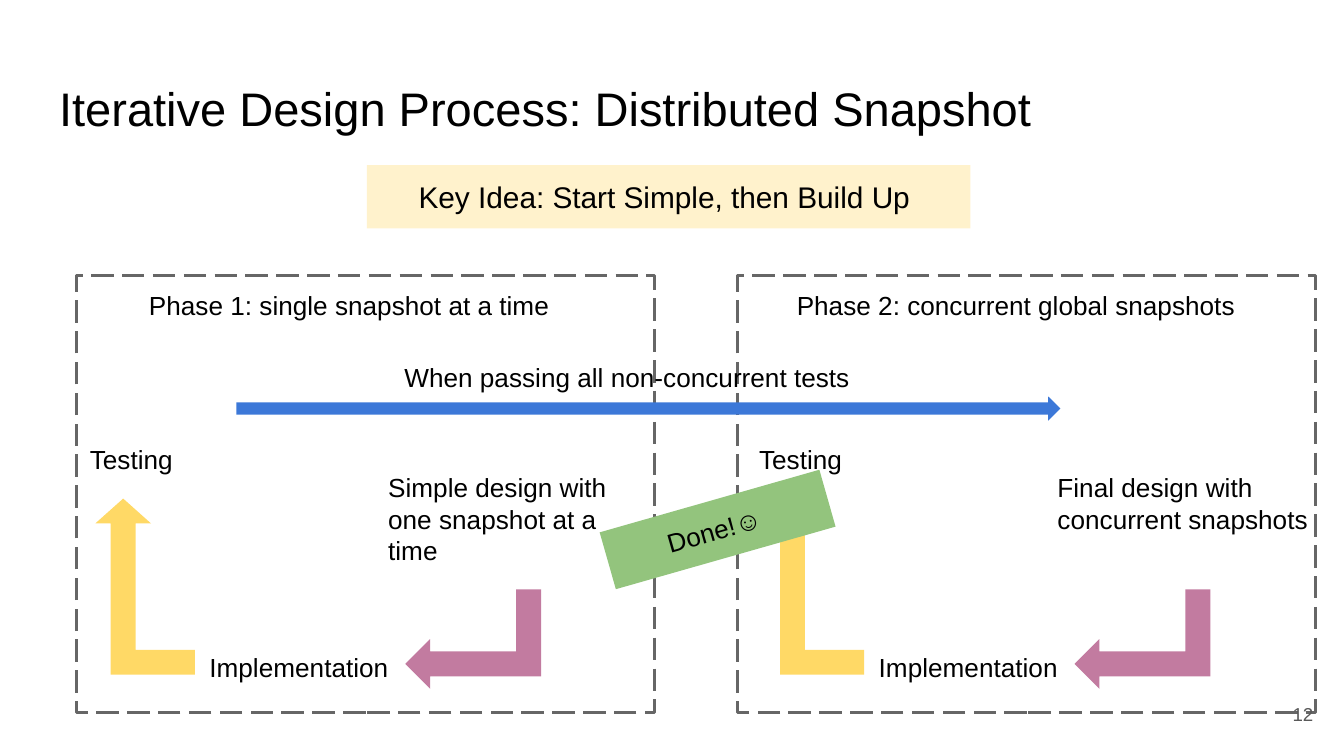
from dataclasses import dataclass

from pptx import Presentation
from pptx.dml.color import RGBColor
from pptx.enum.dml import MSO_LINE
from pptx.enum.shapes import MSO_SHAPE
from pptx.enum.text import MSO_ANCHOR, MSO_AUTO_SIZE, PP_ALIGN
from pptx.util import Inches, Pt

RECTANGLE = MSO_SHAPE.RECTANGLE
BENT_ARROW = MSO_SHAPE.BENT_UP_ARROW
RIGHT_ARROW = MSO_SHAPE.RIGHT_ARROW
LONG_DASH = MSO_LINE.LONG_DASH
TOP, MIDDLE = MSO_ANCHOR.TOP, MSO_ANCHOR.MIDDLE
NO_FIT = MSO_AUTO_SIZE.NONE
LEFT, CENTER, RIGHT = PP_ALIGN.LEFT, PP_ALIGN.CENTER, PP_ALIGN.RIGHT


@dataclass(frozen=True)
class Theme:
    font: str = "Arial"
    text: str = "000000"
    number: str = "595959"
    frame: str = "666666"
    key_idea: str = "FFF2CC"
    design: str = "C27BA0"
    testing: str = "FFD966"
    transition: str = "3C78D8"
    done: str = "93C47D"
    title_size: float = 25.2
    key_size: float = 16
    body_size: float = 14
    number_size: float = 10
    margin: float = 0.1


@dataclass(frozen=True)
class Box:
    left: float
    top: float
    width: float
    height: float

    def lengths(self):
        return [Inches(value) for value in (self.left, self.top, self.width, self.height)]

    def shifted(self, distance: float) -> "Box":
        return Box(self.left + distance, self.top, self.width, self.height)


@dataclass(frozen=True)
class Phase:
    heading: str
    heading_box: Box
    design: str
    design_box: Box
    offset: float


THEME = Theme()
FRAME = Box(0.57, 2.05, 4.3, 3.25)
FRAME_STEP = 4.92
PHASES = [
    Phase("Phase 1: single snapshot at a time", Box(1.01, 2.05, 3.23, 0.44),
          "Simple design with one snapshot at a time", Box(2.79, 3.41, 1.96, 0.91), 0),
    Phase("Phase 2: concurrent global snapshots", Box(5.83, 2.05, 3.52, 0.44),
          "Final design with concurrent snapshots", Box(7.77, 3.41, 2.16, 0.67), 4.98),
]


def write_text(shape, text: str, size: float = THEME.body_size, color: str = THEME.text,
               alignment=LEFT, anchor=TOP) -> None:
    frame = shape.text_frame
    margin = Inches(THEME.margin)
    frame_format = {
        "word_wrap": True, "auto_size": NO_FIT, "vertical_anchor": anchor,
        "margin_left": margin, "margin_right": margin,
        "margin_top": margin, "margin_bottom": margin,
    }
    for name, value in frame_format.items():
        setattr(frame, name, value)
    paragraph = frame.paragraphs[0]
    paragraph.alignment = alignment
    run = paragraph.add_run()
    run.text = text
    for name, value in {"name": THEME.font, "size": Pt(size)}.items():
        setattr(run.font, name, value)
    run.font.color.rgb = RGBColor.from_string(color)


def add_label(slide, box: Box, text: str, **text_format) -> None:
    write_text(slide.shapes.add_textbox(*box.lengths()), text, **text_format)


def add_filled(slide, kind, box: Box, color: str, rotation: float = 0,
               adjustments: tuple = (), flipped: bool = False):
    shape = slide.shapes.add_shape(kind, *box.lengths())
    shape.shadow.inherit = False
    shape.fill.solid()
    shape.fill.fore_color.rgb = RGBColor.from_string(color)
    shape.line.fill.background()
    shape.rotation = rotation
    for index, value in enumerate(adjustments):
        shape.adjustments[index] = value
    if flipped:
        shape.element.spPr.get_or_add_xfrm().set("flipH", "1")
    return shape


def add_frame(slide, box: Box) -> None:
    shape = slide.shapes.add_shape(RECTANGLE, *box.lengths())
    shape.shadow.inherit = False
    shape.fill.background()
    shape.line.color.rgb = RGBColor.from_string(THEME.frame)
    shape.line.width = Pt(1.5)
    shape.line.dash_style = LONG_DASH


def add_phase(slide, phase: Phase) -> None:
    add_label(slide, phase.heading_box, phase.heading)
    add_label(slide, phase.design_box, phase.design)
    add_filled(slide, BENT_ARROW, Box(3.15, 4.25, 0.74, 1.01).shifted(phase.offset),
               THEME.design, 270, (0.25, 0.25, 0.25), True)
    add_label(slide, Box(1.46, 4.75, 1.57, 0.44).shifted(phase.offset), "Implementation")
    add_filled(slide, BENT_ARROW, Box(0.71, 3.71, 0.74, 1.31).shifted(phase.offset),
               THEME.testing, 0, (0.25, 0.28, 0.25), True)
    add_label(slide, Box(0.57, 3.2, 1.57, 0.44).shifted(phase.offset), "Testing")


def place_title(slide, box: Box, text: str) -> None:
    title = slide.shapes.title
    for name, value in zip(("left", "top", "width", "height"), box.lengths()):
        setattr(title, name, value)
    write_text(title, text, size=THEME.title_size)


def main() -> None:
    presentation = Presentation()
    presentation.slide_width = Inches(10)
    presentation.slide_height = Inches(10 * 9 / 16)
    slide = presentation.slides.add_slide(presentation.slide_layouts[5])

    place_title(slide, Box(0.34, 0.49, 9.32, 0.63),
                "Iterative Design Process: Distributed Snapshot")
    for index in range(len(PHASES)):
        add_frame(slide, FRAME.shifted(index * FRAME_STEP))
    key_idea = add_filled(slide, RECTANGLE, Box(2.73, 1.23, 4.49, 0.47), THEME.key_idea)
    write_text(key_idea, "Key Idea: Start Simple, then Build Up ",
               size=THEME.key_size, alignment=CENTER)
    for phase in PHASES:
        add_phase(slide, phase)
    add_filled(slide, RIGHT_ARROW, Box(1.76, 2.95, 6.13, 0.18), THEME.transition)
    done = add_filled(slide, RECTANGLE, Box(4.49, 3.72, 1.7, 0.44), THEME.done, 344.1)
    write_text(done, "Done!☺ ", alignment=CENTER)
    add_label(slide, Box(2.91, 2.59, 4.38, 0.44), "When passing all non-concurrent tests")
    add_label(slide, Box(9.27, 5.1, 0.6, 0.43), "12", size=THEME.number_size,
              color=THEME.number, alignment=RIGHT, anchor=MIDDLE)
    presentation.save("out.pptx")


if __name__ == "__main__":
    main()
